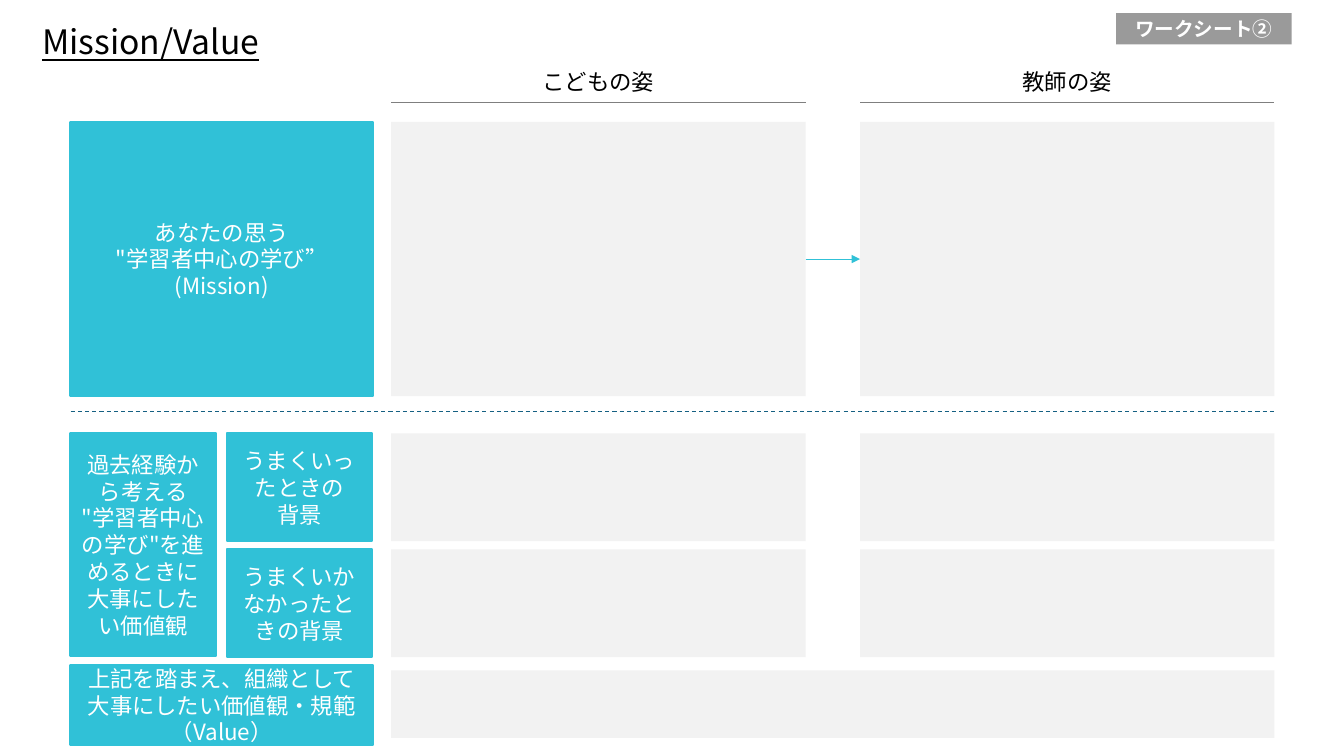
from lxml import etree
from pptx import Presentation
from pptx import util as u
from pptx.dml.color import RGBColor
from pptx.enum import dml, shapes, text
from pptx.oxml import ns

HUES = {"teal": "30C1D7", "pale": "F2F2F2", "gray": "9A9A9A", "rule": "7F7F7F",
        "navy": "156082", "ink": "000000", "white": "FFFFFF"}
COLS = {"full": (0.7, 11.95), "head": (0.7, 3), "past": (0.7, 1.44), "back": (2.25, 1.44),
        "child": (3.88, 4.11), "teach": (8.53, 4.11), "both": (3.88, 8.76),
        "badge": (11.07, 1.74), "title": (0.32, 2.81)}
ROWS = {"title": (0.11, 0.61), "badge": (0.13, 0.31), "label": (0.58, 0.47), "rule": (1.02, 0),
        "mission": (1.21, 2.72), "split": (4.08, 0), "past": (4.3, 2.21), "good": (4.3, 1.07),
        "bad": (5.45, 1.07), "sum": (6.6, 0.79), "value": (6.65, 0.67)}


class Sheet:
    face = "Noto Sans CJK JP"

    def __init__(self, deck):
        self.page = deck.slides.add_slide(deck.slide_layouts[6])
        self.home = self.page.shapes

    def hue(self, name):
        return RGBColor.from_string(HUES[name])

    def span(self, col, row):
        (left, wide), (top, high) = COLS[col], ROWS[row]
        return [u.Inches(n) for n in (left, top, wide, high)]

    def label(self, shape, words, size, hue, bold=False, under=False, align="CENTER"):
        frame = shape.text_frame
        frame.word_wrap = True
        para = frame.paragraphs[0]
        para.text = words
        para.alignment = text.PP_ALIGN[align]
        font = para.font
        font.size, font.bold, font.underline = u.Pt(size), bold, under
        font.color.rgb = self.hue(hue)
        font.name = self.face
        latin = para._p.pPr.find(".//" + ns.qn("a:latin"))
        latin.addnext(etree.Element(ns.qn("a:ea"), typeface=self.face))

    def box(self, col, row, hue="pale"):
        shape = self.home.add_shape(shapes.MSO_SHAPE.RECTANGLE, *self.span(col, row))
        shape.shadow.inherit = False
        shape.fill.solid()
        shape.fill.fore_color.rgb = self.hue(hue)
        shape.line.fill.background()
        shape.text_frame.vertical_anchor = text.MSO_ANCHOR.MIDDLE
        return shape

    def tile(self, col, row, words):
        shape = self.box(col, row, "teal")
        shape.line.color.rgb = self.hue("teal")
        shape.line.width = u.Pt(1.5)
        self.label(shape, words, 16, "white")

    def badge(self, words):
        self.label(self.box("badge", "badge", "gray"), words, 14, "white", bold=True)

    def note(self, col, row, words, size, **style):
        shape = self.home.add_textbox(*self.span(col, row))
        frame = shape.text_frame
        frame.margin_top = frame.margin_bottom = u.Inches(0.1)
        self.label(shape, words, size, "ink", **style)
        frame.auto_size = text.MSO_AUTO_SIZE.SHAPE_TO_FIT_TEXT

    def line(self, col, row, hue):
        left, top, wide, high = self.span(col, row)
        link = self.home.add_connector(shapes.MSO_CONNECTOR.STRAIGHT,
                                       left, top, left + wide, top + high)
        link.line.color.rgb = self.hue(hue)
        link.line.width = u.Pt(0.75)
        etree.SubElement(link._element.spPr, ns.qn("a:effectLst"))
        return link

    def arrow(self, start, end):
        link = self.line("child", "mission", "teal")
        link.begin_connect(start, 3)
        link.end_connect(end, 1)
        stroke = link._element.spPr.find(ns.qn("a:ln"))
        etree.SubElement(stroke, ns.qn("a:tailEnd"), type="triangle")

    def head(self, col, words):
        self.home = self.page.shapes.add_group_shape().shapes
        self.note(col, "label", words, 16)
        self.line(col, "rule", "rule")
        self.home = self.page.shapes


def main():
    deck = Presentation()
    deck.slide_width, deck.slide_height = u.Inches(13.33), u.Inches(7.5)
    sheet = Sheet(deck)
    sheet.note("title", "title", "Mission/Value", 24, under=True, align="LEFT")
    sheet.badge("ワークシート➁")
    sheet.head("child", "こどもの姿")
    sheet.head("teach", "教師の姿")

    cells = {(col, row): sheet.box(col, row)
             for row in ("mission", "good", "bad") for col in ("child", "teach")}
    sheet.box("both", "value")
    sheet.arrow(cells["child", "mission"], cells["teach", "mission"])
    sheet.line("full", "split", "navy").line.dash_style = dml.MSO_LINE.DASH

    for col, row, words in (
        ("head", "mission", "あなたの思う\n\"学習者中心の学び”\n(Mission)"),
        ("past", "past", "過去経験から考える\n\"学習者中心\nの学び\"を進めるときに大事にしたい価値観"),
        ("back", "good", "うまくいったときの\n背景"),
        ("back", "bad", "うまくいかなかったときの背景"),
        ("head", "sum", "上記を踏まえ、組織として大事にしたい価値観・規範\n（Value）"),
    ):
        sheet.tile(col, row, words)
    deck.save("out.pptx")


if __name__ == "__main__":
    main()
